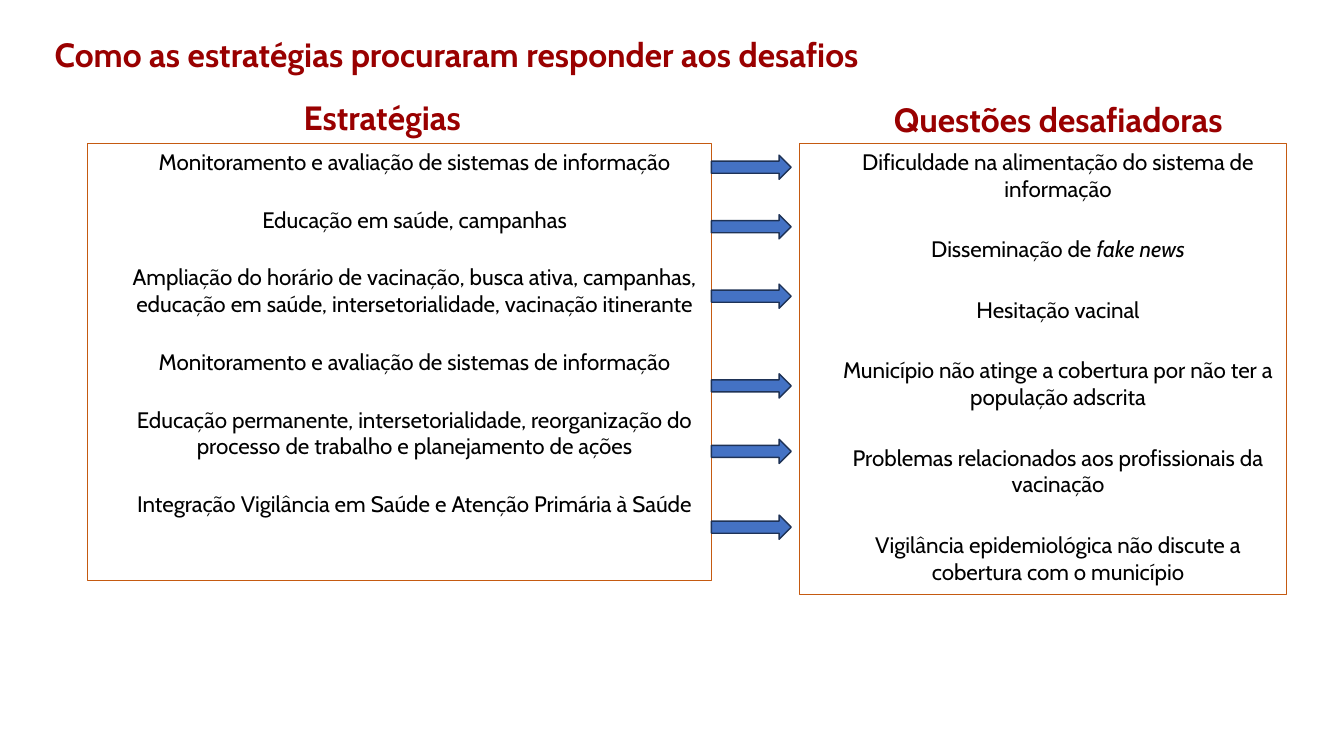
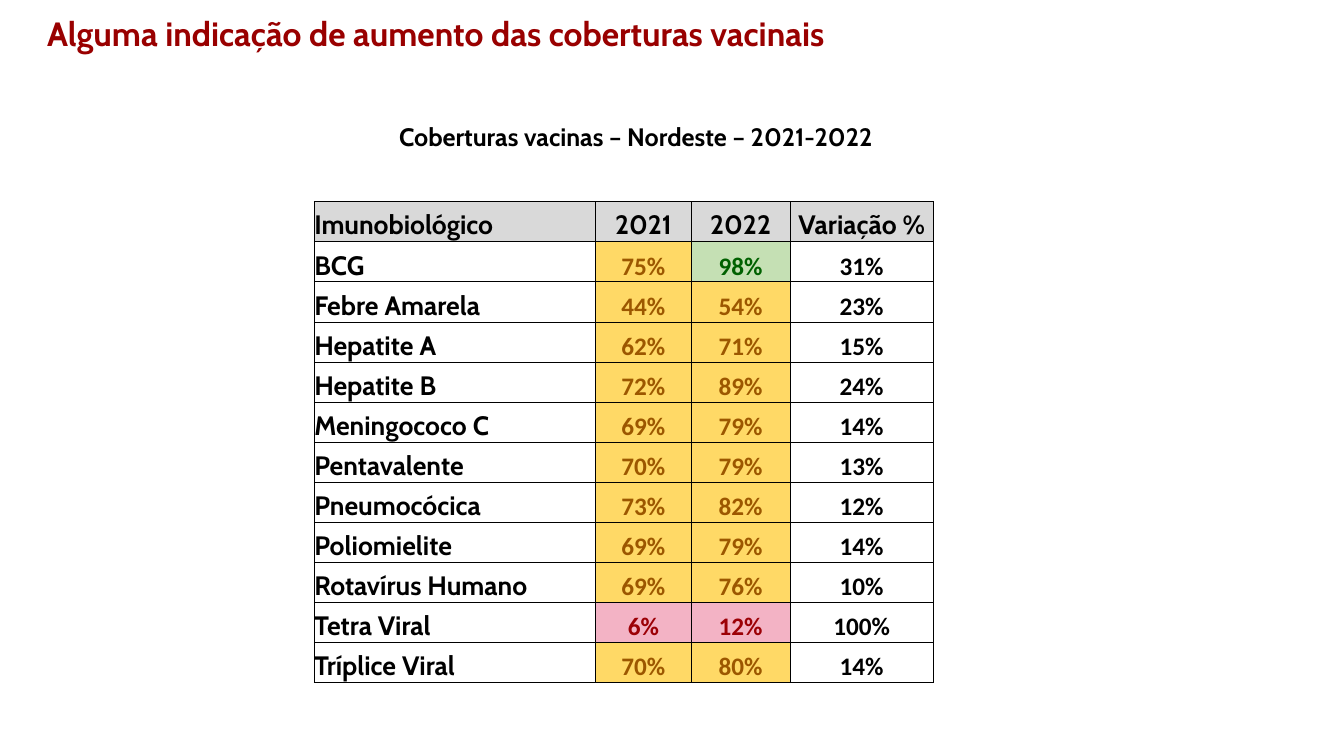
from lxml import etree
from pptx import Presentation
from pptx.dml.color import RGBColor
from pptx.enum.shapes import MSO_SHAPE
from pptx.enum.text import MSO_ANCHOR, PP_ALIGN
from pptx.oxml.ns import qn
from pptx.util import Cm, Pt

LEFT, CENTER = PP_ALIGN.LEFT, PP_ALIGN.CENTER
TOP, MIDDLE, BOTTOM = MSO_ANCHOR.TOP, MSO_ANCHOR.MIDDLE, MSO_ANCHOR.BOTTOM
RECTANGLE, RIGHT_ARROW = MSO_SHAPE.RECTANGLE, MSO_SHAPE.RIGHT_ARROW

BLACK = RGBColor(0x00, 0x00, 0x00)
WHITE = RGBColor(0xFF, 0xFF, 0xFF)
TITLE_RED = RGBColor(0x99, 0x00, 0x00)
BOX_ORANGE = RGBColor(0xC5, 0x5A, 0x11)
ARROW_BLUE = RGBColor(0x44, 0x72, 0xC4)
ARROW_EDGE = RGBColor(0x1E, 0x32, 0x56)
HEADER_GRAY = RGBColor(0xD9, 0xD9, 0xD9)
HIGH_FILL, HIGH_TEXT = RGBColor(0xC5, 0xE0, 0xB4), RGBColor(0x00, 0x61, 0x00)
MEDIUM_FILL, MEDIUM_TEXT = RGBColor(0xFF, 0xD9, 0x66), RGBColor(0x9C, 0x57, 0x00)
LOW_FILL, LOW_TEXT = RGBColor(0xF3, 0xB3, 0xC5), RGBColor(0x9C, 0x00, 0x06)

MAIN_FONT, NUMBER_FONT = "Cabin", "Calibri"
HEADING_HEIGHT = Cm(1.8)

# Strategy, challenge it answers, top of the arrow between them in cm.
RESPONSES = [
    ("Monitoramento e avaliação de sistemas de informação",
     "Dificuldade na alimentação do sistema de informação", 3.91),
    ("Educação em saúde, campanhas",
     "Disseminação de *fake news*", 5.41),
    ("Ampliação do horário de vacinação, busca ativa, campanhas, "
     "educação em saúde, intersetorialidade, vacinação itinerante",
     "Hesitação vacinal", 7.16),
    ("Monitoramento e avaliação de sistemas de informação",
     "Município não atinge a cobertura por não ter a população adscrita", 9.42),
    ("Educação permanente, intersetorialidade, reorganização do "
     "processo de trabalho e planejamento de ações",
     "Problemas relacionados aos profissionais da vacinação", 11.07),
    ("Integração Vigilância em Saúde e Atenção Primária à Saúde",
     "Vigilância epidemiológica não discute a cobertura com o município", 12.98),
]

COLUMNS = [("Imunobiológico", 7.09), ("2021", 2.41), ("2022", 2.49), ("Variação %", 3.61)]
COVERAGE = [
    ("BCG", 75, 98, 31),
    ("Febre Amarela", 44, 54, 23),
    ("Hepatite A", 62, 71, 15),
    ("Hepatite B", 72, 89, 24),
    ("Meningococo C", 69, 79, 14),
    ("Pentavalente", 70, 79, 13),
    ("Pneumocócica", 73, 82, 12),
    ("Poliomielite", 69, 79, 14),
    ("Rotavírus Humano", 69, 76, 10),
    ("Tetra Viral", 6, 12, 100),
    ("Tríplice Viral", 70, 80, 14),
]


def write(paragraph, text, size=16, color=BLACK, bold=False, font=MAIN_FONT,
          align=CENTER, line_spacing=None):
    """Fill a paragraph; parts between asterisks become italic."""
    paragraph.alignment = align
    paragraph.line_spacing = line_spacing
    for index, part in enumerate(text.split("*")):
        if part:
            run = paragraph.add_run()
            run.text = part
            run.font.name = font
            run.font.size = Pt(size)
            run.font.bold = bold
            run.font.italic = index % 2 == 1
            run.font.color.rgb = color


def add_text(slide, text, left, top, width, height, anchor=MIDDLE, **text_format):
    frame = slide.shapes.add_textbox(left, top, width, height).text_frame
    frame.word_wrap = True
    frame.vertical_anchor = anchor
    write(frame.paragraphs[0], text, **text_format)


def add_heading(slide, text, left, top, width, align=CENTER):
    add_text(slide, text, left, top, width, HEADING_HEIGHT, size=24,
             color=TITLE_RED, bold=True, align=align, line_spacing=0.9)


def add_title(slide, text, left, top):
    add_heading(slide, text, left, top, Cm(23.24), align=LEFT)


def add_outlined_shape(slide, kind, left, top, width, height, line, line_width, fill=None):
    shape = slide.shapes.add_shape(kind, left, top, width, height)
    shape.shadow.inherit = False
    if fill is None:
        shape.fill.background()
    else:
        shape.fill.solid()
        shape.fill.fore_color.rgb = fill
    shape.line.color.rgb = line
    shape.line.width = Pt(line_width)
    return shape


def add_item_box(slide, items, left, top, width, height, space_after):
    box = add_outlined_shape(slide, RECTANGLE, left, top, width, height, BOX_ORANGE, 0.75)
    frame = box.text_frame
    frame.word_wrap = True
    frame.vertical_anchor = TOP
    for index, item in enumerate(items):
        paragraph = frame.add_paragraph() if index else frame.paragraphs[0]
        write(paragraph, item)
        paragraph.space_before = Pt(12 if index else 0)
        paragraph.space_after = Pt(space_after)
        paragraph_properties = paragraph._p.get_or_add_pPr()
        paragraph_properties.set("marL", str(Cm(0.76)))
        paragraph_properties.set("indent", "0")


def add_cell_borders(cell):
    cell_properties = cell._tc.get_or_add_tcPr()
    for index, side in enumerate(("lnL", "lnR", "lnT", "lnB")):
        border = etree.Element(qn(f"a:{side}"), w=str(Pt(0.5)))
        fill = etree.SubElement(border, qn("a:solidFill"))
        etree.SubElement(fill, qn("a:srgbClr"), val=str(BLACK))
        cell_properties.insert(index, border)


def fill_cell(cell, text, fill=WHITE, **text_format):
    cell.margin_left = cell.margin_right = cell.margin_top = cell.margin_bottom = 0
    cell.vertical_anchor = BOTTOM
    cell.fill.solid()
    cell.fill.fore_color.rgb = fill
    add_cell_borders(cell)
    write(cell.text_frame.paragraphs[0], text, bold=True, **text_format)


def coverage_colors(percent):
    """Return the fill and text colours of a coverage level."""
    if percent >= 95:
        return HIGH_FILL, HIGH_TEXT
    if percent >= 40:
        return MEDIUM_FILL, MEDIUM_TEXT
    return LOW_FILL, LOW_TEXT


def add_coverage_table(slide, left, top, width, row_height):
    row_count = len(COVERAGE) + 1
    table = slide.shapes.add_table(row_count, len(COLUMNS), left, top, width,
                                   row_height * row_count).table
    table.first_row = table.horz_banding = False
    for row in table.rows:
        row.height = row_height
    total_width = sum(share for _, share in COLUMNS)
    for index, (label, share) in enumerate(COLUMNS):
        table.columns[index].width = int(width * share / total_width)
        fill_cell(table.cell(0, index), label, fill=HEADER_GRAY, size=19,
                  align=CENTER if index else LEFT)
    for row_index, (vaccine, *percents) in enumerate(COVERAGE, start=1):
        fill_cell(table.cell(row_index, 0), vaccine, size=19, align=LEFT)
        *years, change = percents
        colors = [coverage_colors(percent) for percent in years] + [(WHITE, BLACK)]
        for column, (percent, (fill, color)) in enumerate(zip(years + [change], colors), start=1):
            fill_cell(table.cell(row_index, column), f"{percent}%", fill=fill,
                      color=color, size=18, font=NUMBER_FONT)


def build_strategies_slide(slide):
    strategies, challenges, arrow_tops = zip(*RESPONSES)
    box_top = Cm(3.61)
    add_title(slide, "Como as estratégias procuraram responder aos desafios", Cm(1.13), Cm(0.53))
    add_item_box(slide, challenges, Cm(20.14), box_top, Cm(12.29), Cm(11.38), space_after=12)
    add_item_box(slide, strategies, Cm(2.21), box_top, Cm(15.72), Cm(11.02), space_after=10)
    add_heading(slide, "Estratégias", Cm(5.94), Cm(2.11), Cm(7.39))
    add_heading(slide, "Questões desafiadoras", Cm(21.69), Cm(2.16), Cm(9.96))
    for arrow_top in arrow_tops:
        add_outlined_shape(slide, RIGHT_ARROW, Cm(17.93), Cm(arrow_top), Cm(2.01), Cm(0.61),
                           ARROW_EDGE, 1, fill=ARROW_BLUE)


def build_coverage_slide(slide):
    add_title(slide, "Alguma indicação de aumento das coberturas vacinais", Cm(0.94), Cm(0))
    add_coverage_table(slide, Cm(7.92), Cm(5.08), Cm(15.6), Cm(1.01))
    add_text(slide, "Coberturas vacinas – Nordeste – 2021-2022", Cm(6.12), Cm(2.92),
             Cm(19.81), Cm(1.02), anchor=TOP, size=18, bold=True)


def main():
    presentation = Presentation()
    presentation.slide_width = Cm(33.87)
    presentation.slide_height = Cm(19.05)
    blank_layout = presentation.slide_layouts[6]
    for build in (build_strategies_slide, build_coverage_slide):
        build(presentation.slides.add_slide(blank_layout))
    presentation.save("out.pptx")


if __name__ == "__main__":
    main()
